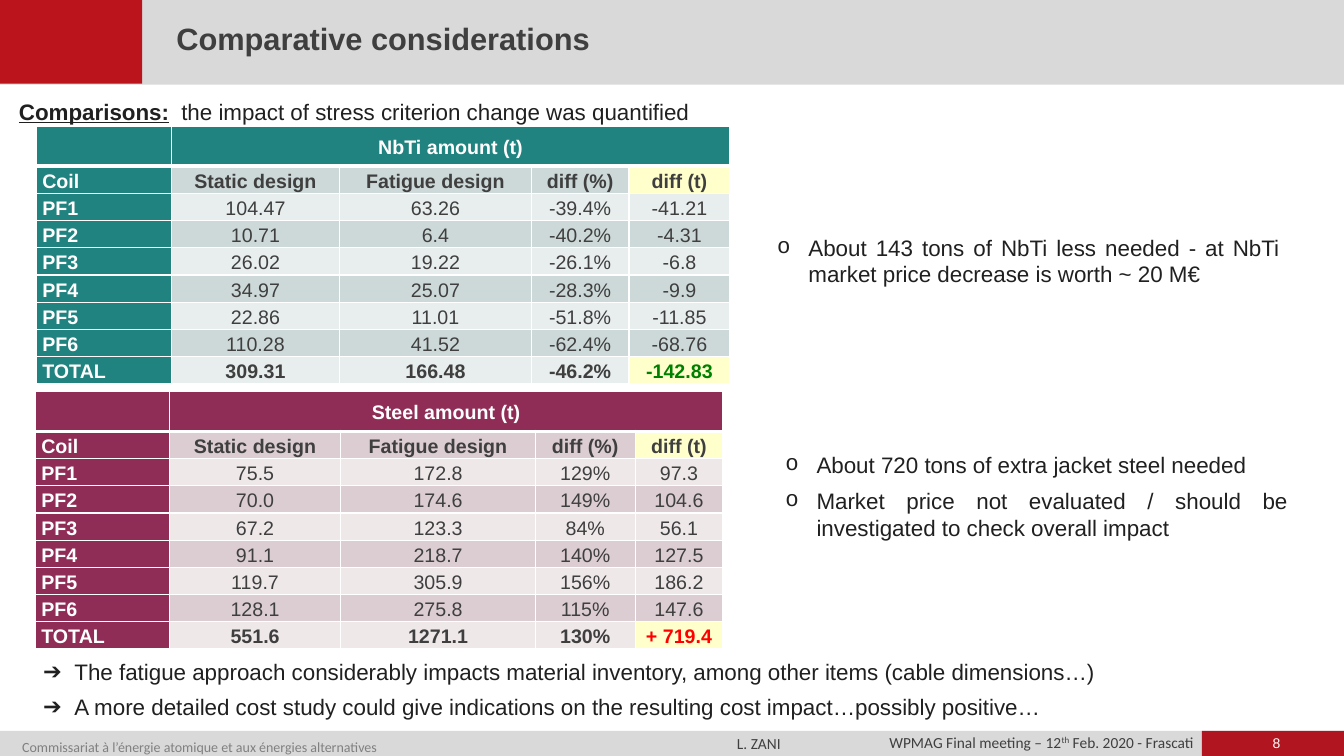
from lxml import etree
from pptx import Presentation
from pptx.dml.color import RGBColor
from pptx.enum.shapes import MSO_SHAPE
from pptx.enum.text import MSO_ANCHOR, PP_ALIGN
from pptx.oxml.ns import qn
from pptx.util import Inches, Pt

RECTANGLE = MSO_SHAPE.RECTANGLE
TOP, MIDDLE = MSO_ANCHOR.TOP, MSO_ANCHOR.MIDDLE
LEFT, CENTER = PP_ALIGN.LEFT, PP_ALIGN.CENTER
RIGHT, JUSTIFY = PP_ALIGN.RIGHT, PP_ALIGN.JUSTIFY

COLORS = {
    "white": "FFFFFF", "band": "D9D9D9", "red": "BC141C", "page_red": "B1151F",
    "dark": "3F3F3F", "text": "202020", "gray": "808080", "highlight": "FFFFCC",
    "teal": "218380", "teal_mid": "CDD9D8", "teal_light": "E8EDED",
    "plum": "8F2D56", "plum_mid": "DBCDD1", "plum_light": "EEE8E9",
    "saving": "008000", "extra": "FF0000",
}
COLUMN_TITLES = ["Coil", "Static design", "Fatigue design", "diff (%)", "diff (t)"]
NBTI_ROWS = [
    ["PF1", "104.47", "63.26", "-39.4%", "-41.21"],
    ["PF2", "10.71", "6.4", "-40.2%", "-4.31"],
    ["PF3", "26.02", "19.22", "-26.1%", "-6.8"],
    ["PF4", "34.97", "25.07", "-28.3%", "-9.9"],
    ["PF5", "22.86", "11.01", "-51.8%", "-11.85"],
    ["PF6", "110.28", "41.52", "-62.4%", "-68.76"],
    ["TOTAL", "309.31", "166.48", "-46.2%", "-142.83"],
]
STEEL_ROWS = [
    ["PF1", "75.5", "172.8", "129%", "97.3"],
    ["PF2", "70.0", "174.6", "149%", "104.6"],
    ["PF3", "67.2", "123.3", "84%", "56.1"],
    ["PF4", "91.1", "218.7", "140%", "127.5"],
    ["PF5", "119.7", "305.9", "156%", "186.2"],
    ["PF6", "128.1", "275.8", "115%", "147.6"],
    ["TOTAL", "551.6", "1271.1", "130%", "+ 719.4"],
]


def rgb(name):
    return RGBColor.from_string(COLORS[name])


class SlideBuilder:
    font = "Arial"

    def __init__(self, slide):
        self.slide = slide

    def style(self, paragraph, size, color, bold=False, align=LEFT, spacing=None, font=None):
        paragraph.alignment = align
        if spacing:
            paragraph.line_spacing = spacing
        paragraph.font.name = font or self.font
        paragraph.font.size = Pt(size)
        paragraph.font.bold = bold
        paragraph.font.color.rgb = rgb(color)

    def block(self, left, top, width, height, color):
        shape = self.slide.shapes.add_shape(
            RECTANGLE, Inches(left), Inches(top), Inches(width), Inches(height))
        shape.shadow.inherit = False
        shape.fill.solid()
        shape.fill.fore_color.rgb = rgb(color)
        shape.line.fill.background()

    def frame(self, left, top, width, height, inset=(0.1, 0.05), anchor=TOP, wrap=True):
        frame = self.slide.shapes.add_textbox(
            Inches(left), Inches(top), Inches(width), Inches(height)).text_frame
        frame.word_wrap = wrap
        frame.vertical_anchor = anchor
        frame.margin_left = frame.margin_right = Inches(inset[0])
        frame.margin_top = frame.margin_bottom = Inches(inset[1])
        return frame

    def label(self, left, top, width, height, runs, size, color, wrap=True,
              inset=(0.08, 0), anchor=TOP, tab=None, **style):
        paragraph = self.frame(left, top, width, height, inset, anchor, wrap).paragraphs[0]
        added = []
        for text in runs:
            run = paragraph.add_run()
            run.text = text
            added.append(run)
        if tab:
            tabs = etree.SubElement(paragraph._p.get_or_add_pPr(), qn("a:tabLst"))
            etree.SubElement(tabs, qn("a:tab"), pos=str(Inches(tab)), algn="l")
        self.style(paragraph, size, color, **style)
        return added

    def bullets(self, left, top, width, height, symbol, bullet_font, lines):
        frame = self.frame(left, top, width, height)
        for index, line in enumerate(lines):
            paragraph = frame.paragraphs[0] if index == 0 else frame.add_paragraph()
            paragraph.text = line
            if index:
                paragraph.space_before = Pt(6)
            properties = paragraph._p.get_or_add_pPr()
            properties.set("marL", str(Inches(0.31)))
            properties.set("indent", str(-Inches(0.31)))
            etree.SubElement(properties, qn("a:buFont"), typeface=bullet_font)
            etree.SubElement(properties, qn("a:buChar"), char=symbol)
            self.style(paragraph, 16, "text", align=JUSTIFY)

    def borders(self, cell, top, bottom):
        properties = cell._tc.get_or_add_tcPr()
        for side, points in (("L", 1), ("R", 1), ("T", top), ("B", bottom)):
            line = etree.SubElement(properties, qn(f"a:ln{side}"), w=str(Pt(points)))
            fill = etree.SubElement(line, qn("a:solidFill"))
            etree.SubElement(fill, qn("a:srgbClr"), val=COLORS["white"])

    def coil_table(self, left, top, widths, title, body, theme, total_color):
        rows = [["", title, "", "", ""], COLUMN_TITLES] + body
        last_row, last_column = len(rows) - 1, len(widths) - 1
        heights = [0.4] + [0.27] * last_row
        table = self.slide.shapes.add_table(
            len(rows), len(widths), Inches(left), Inches(top),
            Inches(sum(widths)), Inches(sum(heights))).table
        table.first_row = table.horz_banding = False
        for column, width in zip(table.columns, widths):
            column.width = Inches(width)
        for row, height in zip(table.rows, heights):
            row.height = Inches(height)
        for r, values in enumerate(rows):
            for c, value in enumerate(values):
                cell = table.cell(r, c)
                heading = r == 0 or c == 0
                summary = r in (1, last_row)
                if heading:
                    fill, color = theme, "white"
                elif summary and c == last_column:
                    fill, color = "highlight", total_color if r == last_row else "dark"
                else:
                    fill, color = theme + ("_mid" if r % 2 else "_light"), "dark"
                self.borders(cell, 3 if r == 1 else 1, 3 if r == 0 else 1)
                cell.fill.solid()
                cell.fill.fore_color.rgb = rgb(fill)
                cell.vertical_anchor = MIDDLE
                cell.margin_left = cell.margin_right = Inches(0.06)
                cell.margin_top = cell.margin_bottom = 0
                paragraph = cell.text_frame.paragraphs[0]
                if value:
                    paragraph.text = value
                self.style(paragraph, 14, color, bold=heading or summary,
                           align=CENTER if c else LEFT, spacing=1.15)
        table.cell(0, 1).merge(table.cell(0, last_column))


def main():
    presentation = Presentation()
    presentation.slide_width = Inches(13.33)
    presentation.slide_height = Inches(7.5)
    builder = SlideBuilder(presentation.slides.add_slide(presentation.slide_layouts[6]))

    builder.block(0, 7.25, 13.33, 0.25, "band")
    builder.block(0, 0, 13.33, 0.84, "band")
    builder.block(11.92, 7.25, 1.41, 0.25, "page_red")
    builder.block(0, 0, 1.41, 0.83, "red")

    meeting = builder.label(
        8.58, 7.29, 3.34, 0.17,
        ["WPMAG Final meeting – 12", "th", " Feb. 2020 - Frascati"],
        11, "dark", align=RIGHT, spacing=0.9, font="Calibri")
    meeting[1]._r.get_or_add_rPr().set("baseline", "30000")
    builder.label(0.14, 7.26, 6.03, 0.21,
                  ["Commissariat à l’énergie atomique et aux énergies alternatives"],
                  10, "gray", spacing=1.4, font="Calibri")
    builder.label(7.23, 7.28, 0.6, 0.19, ["L. ZANI"], 11, "dark", wrap=False, font="Calibri")
    builder.label(12.2, 7.29, 0.92, 0.17, ["8"], 10, "white", align=CENTER)

    builder.label(1.61, 0.21, 6.41, 0.41, ["Comparative considerations"], 22, "dark",
                  inset=(0.14, 0.05), anchor=MIDDLE, bold=True, spacing=0.8)
    comparison = builder.label(
        0.09, 0.84, 12.77, 0.45,
        ["Comparisons:", "\tthe impact of stress criterion change was quantified"],
        16, "text", inset=(0.1, 0.05), tab=1.61, align=JUSTIFY, spacing=Pt(25))
    comparison[0].font.bold = True
    comparison[0].font.underline = True

    builder.coil_table(0.36, 1.25, [1.34, 1.67, 1.9, 0.97, 1], "NbTi amount (t)",
                       NBTI_ROWS, "teal", "saving")
    builder.bullets(7.61, 2.27, 5.18, 0.64, "o", "Courier New", [
        "About 143 tons of NbTi less needed - at NbTi market price decrease is worth ~ 20 M€"])
    builder.coil_table(0.35, 3.88, [1.33, 1.7, 1.93, 0.99, 0.87], "Steel amount (t)",
                       STEEL_ROWS, "plum", "extra")
    builder.bullets(7.69, 4.43, 5.18, 0.99, "o", "Courier New", [
        "About 720 tons of extra jacket steel needed",
        "Market price not evaluated / should be investigated to check overall impact"])
    builder.bullets(0.33, 6.48, 12.08, 0.72, "➔", "Arial", [
        "The fatigue approach considerably impacts material inventory, "
        "among other items (cable dimensions…)",
        "A more detailed cost study could give indications on the resulting "
        "cost impact…possibly positive…"])

    presentation.save("out.pptx")


if __name__ == "__main__":
    main()
